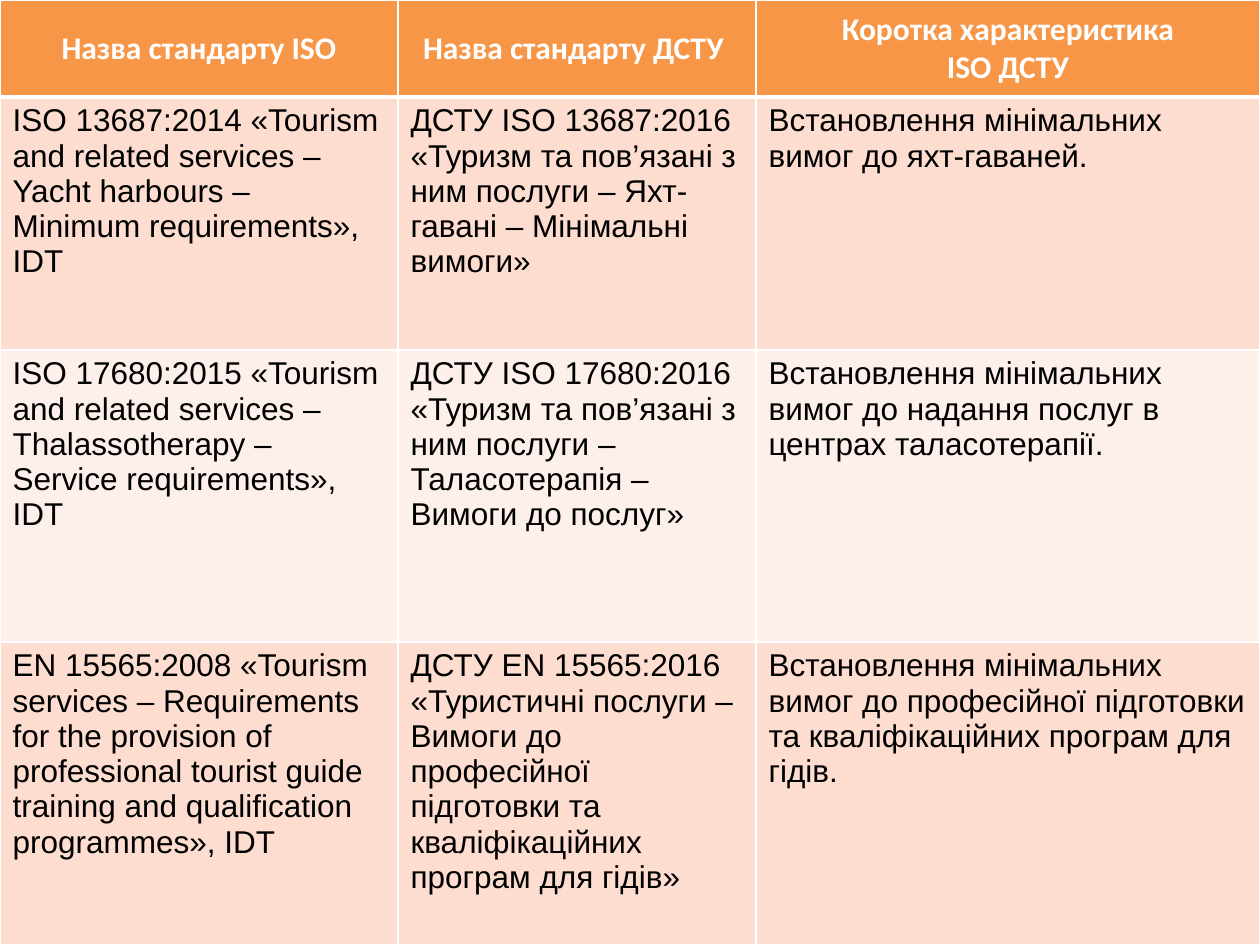
from dataclasses import dataclass

from lxml import etree
from pptx import Presentation, util as u
from pptx.dml.color import RGBColor
from pptx.enum import text
from pptx.oxml import ns

PX = u.Inches(1) / 126


@dataclass(frozen=True)
class Theme:
    """Colours, fonts and type sizes of the slide."""
    header_fill: str = "F79646"
    band_fills: tuple = ("FCDDCF", "FDEFE9")
    header_color: str = "FFFFFF"
    body_color: str = "000000"
    border: str = "FFFFFF"
    header_font: str = "Calibri"
    body_font: str = "Arial"
    size: int = 18
    thin: int = 1
    thick: int = 3


THEME = Theme()
COLUMNS = (398, 358, 504)
ROWS = (97, 253, 292, 303)
STANDARDS = (
    ("Назва стандарту ISO",
     "Назва стандарту ДСТУ ",
     "Коротка характеристика\nISO ДСТУ"),
    ("ISO 13687:2014 «Tourism and related services – Yacht harbours – "
     "Minimum requirements», IDT",
     "ДСТУ ISO 13687:2016 «Туризм та пов’язані з ним послуги – "
     "Яхт-гавані – Мінімальні вимоги»",
     "Встановлення мінімальних вимог до яхт-гаваней."),
    ("ISO 17680:2015 «Tourism and related services – Thalassotherapy – "
     "Service requirements», IDT",
     "ДСТУ ISO 17680:2016 «Туризм та пов’язані з ним послуги – "
     "Таласотерапія – Вимоги до послуг»",
     "Встановлення мінімальних вимог до надання послуг в центрах "
     "таласотерапії."),
    ("EN 15565:2008 «Tourism services – Requirements for the provision of "
     "professional tourist guide training and qualification programmes», IDT",
     "ДСТУ EN 15565:2016 «Туристичні послуги – Вимоги до професійної "
     "підготовки та кваліфікаційних програм для гідів»",
     "Встановлення мінімальних вимог до професійної підготовки та "
     "кваліфікаційних програм для гідів."),
)


def px(n):
    """Turn pixels into EMU."""
    return u.Emu(round(n * PX))


def set_borders(cell, top, bottom):
    """Draw the four cell borders, with top and bottom widths in points."""
    tc_pr = cell._tc.get_or_add_tcPr()
    widths = {"L": THEME.thin, "R": THEME.thin, "T": top, "B": bottom}
    for side, width in widths.items():
        ln = etree.SubElement(tc_pr, ns.qn(f"a:ln{side}"), w=str(u.Pt(width)))
        fill = etree.SubElement(ln, ns.qn("a:solidFill"))
        etree.SubElement(fill, ns.qn("a:srgbClr"), val=THEME.border)


def style_cell(cell, row):
    """Style a cell as a header or as part of a banded body row."""
    header = row == 0
    set_borders(cell,
                top=THEME.thick if row == 1 else THEME.thin,
                bottom=THEME.thick if header else THEME.thin)
    fill = THEME.header_fill if header else THEME.band_fills[(row - 1) % 2]
    cell.fill.solid()
    cell.fill.fore_color.rgb = RGBColor.from_string(fill)
    cell.vertical_anchor = text.MSO_ANCHOR.MIDDLE if header else text.MSO_ANCHOR.TOP
    color = THEME.header_color if header else THEME.body_color
    for p in cell.text_frame.paragraphs:
        p.alignment = text.PP_ALIGN.CENTER if header else text.PP_ALIGN.LEFT
        p.font.name = THEME.header_font if header else THEME.body_font
        p.font.size = u.Pt(THEME.size)
        p.font.bold = header
        p.font.color.rgb = RGBColor.from_string(color)


def add_standards_table(s, x, y, w, h):
    """Place the table of standards in the given box."""
    table = s.shapes.add_table(len(ROWS), len(COLUMNS),
                               px(x), px(y), px(w), px(h)).table
    for column, width in zip(table.columns, COLUMNS):
        column.width = px(width * w / sum(COLUMNS))
    for row, height in zip(table.rows, ROWS):
        row.height = px(height * h / sum(ROWS))
    for i, values in enumerate(STANDARDS):
        for j, value in enumerate(values):
            cell = table.cell(i, j)
            cell.text = value
            style_cell(cell, i)


def main():
    """Build and save the slide."""
    prs = Presentation()
    prs.slide_width, prs.slide_height = px(1260), px(945)
    s = prs.slides.add_slide(prs.slide_layouts[6])
    add_standards_table(s, 0, 0, 1260, 945)
    prs.save("out.pptx")


if __name__ == "__main__":
    main()
